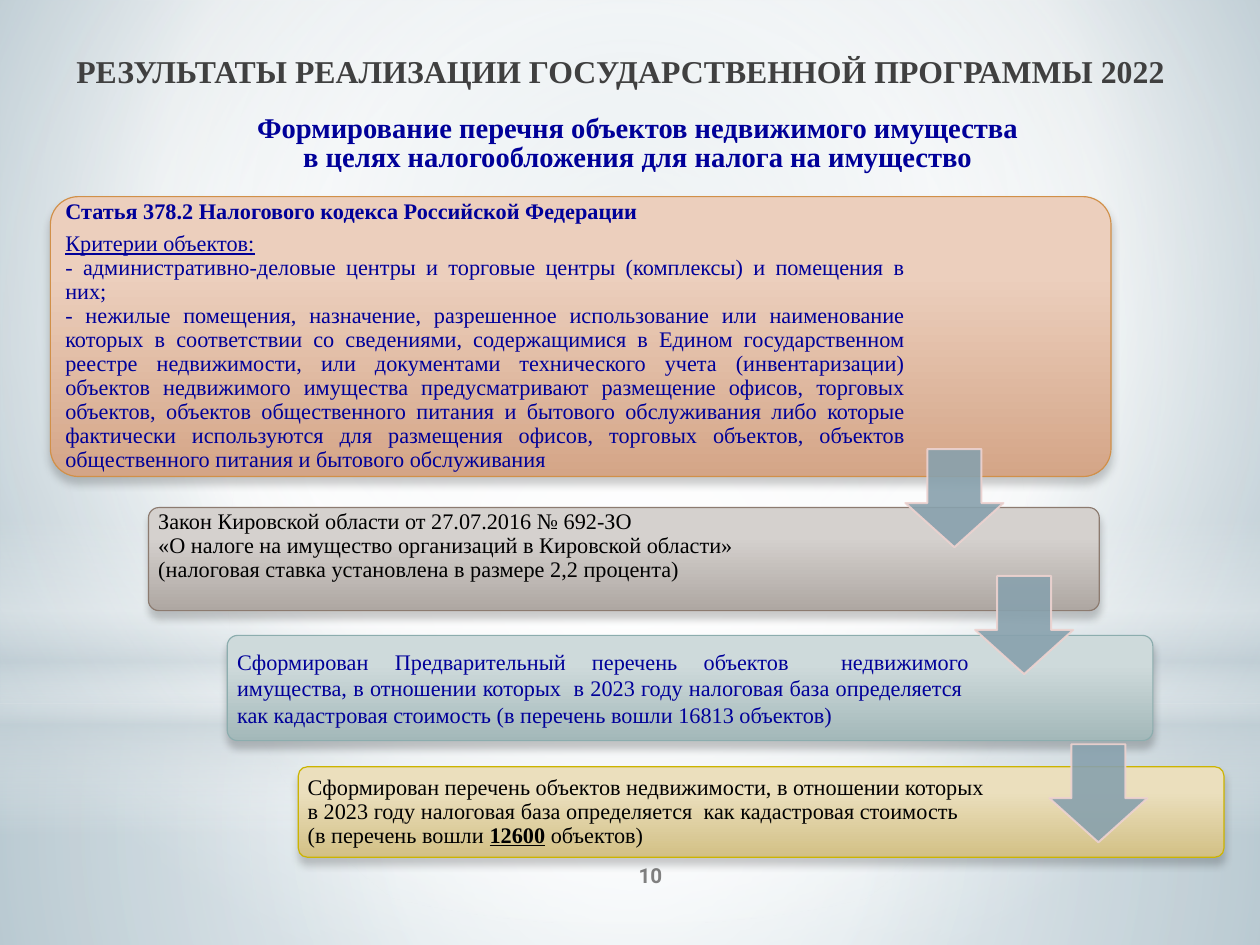
from lxml import etree
from pptx import Presentation
from pptx.dml.color import RGBColor
from pptx.enum.shapes import MSO_SHAPE
from pptx.enum.text import MSO_ANCHOR, PP_ALIGN
from pptx.oxml import parse_xml
from pptx.oxml.ns import nsdecls, qn
from pptx.util import Cm, Pt

RECT, OVAL = MSO_SHAPE.RECTANGLE, MSO_SHAPE.OVAL
CARD, ARROW = MSO_SHAPE.ROUNDED_RECTANGLE, MSO_SHAPE.DOWN_ARROW
LEFT, CENTER, JUSTIFY = PP_ALIGN.LEFT, PP_ALIGN.CENTER, PP_ALIGN.JUSTIFY
TOP, MIDDLE = MSO_ANCHOR.TOP, MSO_ANCHOR.MIDDLE

W, H = 28, 21
COLORS = {
    "white": "FFFFFF", "black": "000000", "navy": "000099",
    "title": "404040", "number": "808080",
    "sky": "B8CAD3", "steel": "8FAEBD", "mist": "C5D1D7",
    "arrow": "88A1AD", "arrow_line": "EED3D0",
    "peach": "ECCFBD", "peach_dark": "D4A587", "peach_line": "D19049",
    "stone": "D5D1CE", "stone_dark": "AEA7A2", "stone_line": "8C7B70",
    "sage": "CEDADB", "sage_dark": "A3B8B9", "sage_line": "8CADAE",
    "sand": "EBDFBD", "sand_dark": "D2C085", "sand_line": "CCB400",
}


def gradient(stops, rect=None):
    """Radial towards rect (l, t, r, b in percent), or top to bottom without it."""
    gs = "".join(
        f'<a:gs pos="{pos * 1000}"><a:srgbClr val="{COLORS[c]}">'
        f'<a:alpha val="{alpha * 1000}"/></a:srgbClr></a:gs>'
        for pos, c, alpha in stops)
    if rect:
        l, t, r, b = (v * 1000 for v in rect)
        way = (f'<a:path path="circle"><a:fillToRect l="{l}" t="{t}" '
               f'r="{r}" b="{b}"/></a:path>')
    else:
        way = '<a:lin ang="5400000" scaled="0"/>'
    return parse_xml(f'<a:gradFill {nsdecls("a")} rotWithShape="1">'
                     f'<a:gsLst>{gs}</a:gsLst>{way}</a:gradFill>')


class Deck:
    font = "Times New Roman"

    def __init__(self):
        self.prs = Presentation()
        self.prs.slide_width, self.prs.slide_height = Cm(W), Cm(H)
        self.s = self.prs.slides.add_slide(self.prs.slide_layouts[6])

    def color(self, name):
        return RGBColor.from_string(COLORS[name])

    def swap_fill(self, parent, grad):
        parent.replace(parent.find(qn("a:solidFill")), grad)

    def background(self, grad):
        self.s.background.fill.solid()
        self.swap_fill(self.s.element.find(".//" + qn("p:bgPr")), grad)

    def shape(self, kind, box, fill, line=None, width=0.75):
        sp = self.s.shapes.add_shape(kind, *map(Cm, box))
        sp.shadow.inherit = False
        sp.fill.solid()
        if isinstance(fill, str):
            sp.fill.fore_color.rgb = self.color(fill)
        else:
            self.swap_fill(sp.element.spPr, fill)
        if line:
            sp.line.color.rgb = self.color(line)
            sp.line.width = Pt(width)
        else:
            sp.line.fill.background()
        return sp

    def add_text(self, sp, paras, size, color, align, anchor=MIDDLE,
                 spacing=1.0, insets=(0.25, 0.15, 0.25, 0.15), font=None):
        """Each paragraph is (space before, [(text, bold, underline), ...])."""
        tf = sp.text_frame
        tf.word_wrap = True
        tf.vertical_anchor = anchor
        (tf.margin_left, tf.margin_top,
         tf.margin_right, tf.margin_bottom) = map(Cm, insets)
        for i, (before, runs) in enumerate(paras):
            p = tf.paragraphs[0] if i == 0 else tf.add_paragraph()
            p.alignment, p.line_spacing = align, spacing
            p.space_before = Pt(before)
            for text, bold, underline in runs:
                r = p.add_run()
                r.text = text
                r.font.name, r.font.size = font or self.font, Pt(size)
                r.font.bold, r.font.underline = bold, underline
                r.font.color.rgb = self.color(color)

    def text(self, box, lines, size, color, **style):
        sp = self.s.shapes.add_textbox(*map(Cm, box))
        paras = [(0, [(line, True, False)]) for line in lines]
        self.add_text(sp, paras, size, color, CENTER, **style)

    def card(self, box, tone, paras, color, right, **style):
        fill = gradient([(28, tone, 100), (100, tone + "_dark", 100)])
        sp = self.shape(CARD, box, fill, tone + "_line")
        sp.adjustments[0] = 0.1
        shadow = etree.SubElement(
            sp.element.spPr.find(qn("a:effectLst")), qn("a:outerShdw"),
            blurRad=str(Pt(5)), dist=str(Pt(4)), dir="5400000", rotWithShape="0")
        black = etree.SubElement(shadow, qn("a:srgbClr"), val=COLORS["black"])
        etree.SubElement(black, qn("a:alpha"), val="20000")
        self.add_text(sp, paras, 14, color, insets=(0.15, 0, right, 0), **style)

    def arrow(self, x, y):
        sp = self.shape(ARROW, (x, y, 2.18, 2.18), "arrow", "arrow_line", 1.25)
        sp.adjustments[0], sp.adjustments[1] = 0.55, 0.45
        for c in sp.element.spPr.iter(qn("a:srgbClr")):
            etree.SubElement(c, qn("a:alpha"), val="90000")


def plain(text):
    return 0, [(text, False, False)]


def main():
    d = Deck()
    middle = (50, 50, 50, 50)

    # Backdrop
    d.background(gradient([(0, "sky", 100), (60, "white", 100), (100, "steel", 100)],
                          (20, 10, 20, 60)))
    d.shape(RECT, (0, 15.63, W, 5.37), gradient(
        [(0, "white", 91), (37, "white", 76), (100, "mist", 79)], middle))
    d.shape(RECT, (0, 0, W, 15.63), gradient(
        [(0, "white", 89), (48, "white", 62), (100, "mist", 79)], middle))
    d.shape(RECT, (0, 11.53, W, 7.01), gradient(
        [(0, "white", 0), (29, "white", 30), (45, "mist", 40),
         (55, "white", 26), (65, "mist", 60), (100, "white", 0)]))
    d.shape(OVAL, (0, 4.9, W, 15.63), gradient(
        [(0, "white", 100), (56, "white", 0)], middle))

    # Headings and page number
    d.text((1.27, 1, 25.04, 1.7),
           ["РЕЗУЛЬТАТЫ РЕАЛИЗАЦИИ ГОСУДАРСТВЕННОЙ ПРОГРАММЫ 2022"],
           20, "title", anchor=TOP)
    d.text((11.66, 18.9, 5.59, 1.12), ["10"], 13, "number", font="Roboto")
    d.text((1.85, 2.41, 24.64, 1.6),
           ["Формирование перечня объектов недвижимого имущества",
            "в целях налогообложения для налога на имущество"],
           18, "navy", anchor=TOP, spacing=0.87, insets=(0.25, 0.13, 0.25, 0.13))

    # Cascade of cards
    d.card((1.12, 4.37, 23.57, 6.22), "peach", [
        (0, [("Статья 378.2 Налогового кодекса Российской Федерации", True, False)]),
        (5, [("Критерии объектов:", False, True)]),
        plain("- административно-деловые центры и торговые центры (комплексы) "
              "и помещения в них;"),
        plain("- нежилые помещения, назначение, разрешенное использование или "
              "наименование которых в соответствии со сведениями, содержащимися "
              "в Едином государственном реестре недвижимости, или документами "
              "технического учета (инвентаризации) объектов недвижимого имущества "
              "предусматривают размещение офисов, торговых объектов, объектов "
              "общественного питания и бытового обслуживания либо которые "
              "фактически используются для размещения офисов, торговых объектов, "
              "объектов общественного питания и бытового обслуживания"),
    ], "navy", 4.39, align=JUSTIFY, spacing=0.9)
    d.card((3.3, 11.28, 21.13, 2.29), "stone", [
        plain("Закон Кировской области от 27.07.2016 № 692-ЗО"),
        plain("«О налоге на имущество организаций в Кировской области»"),
        plain("(налоговая ставка установлена в размере 2,2 процента)"),
    ], "black", 4.18, align=LEFT, anchor=TOP, spacing=0.9)
    d.card((5.05, 14.12, 20.57, 2.34), "sage", [
        plain("Сформирован Предварительный перечень объектов  недвижимого "
              "имущества, в отношении которых  в 2023 году налоговая база "
              "определяется  как кадастровая стоимость (в перечень вошли "
              "16813 объектов)"),
    ], "navy", 4.01, align=JUSTIFY)
    d.card((6.63, 17.04, 20.57, 2.01), "sand", [
        plain("Сформирован перечень объектов недвижимости, в отношении которых"),
        plain("в 2023 году налоговая база определяется  как кадастровая стоимость"),
        (0, [("(в перечень вошли ", False, False), ("12600", True, True),
             (" объектов)", False, False)]),
    ], "black", 4.07, align=LEFT, spacing=0.9)

    # Arrows between the cards
    for x, y in ((20.12, 9.98), (21.67, 12.8), (23.32, 16.54)):
        d.arrow(x, y)

    d.prs.save("out.pptx")


if __name__ == "__main__":
    main()
